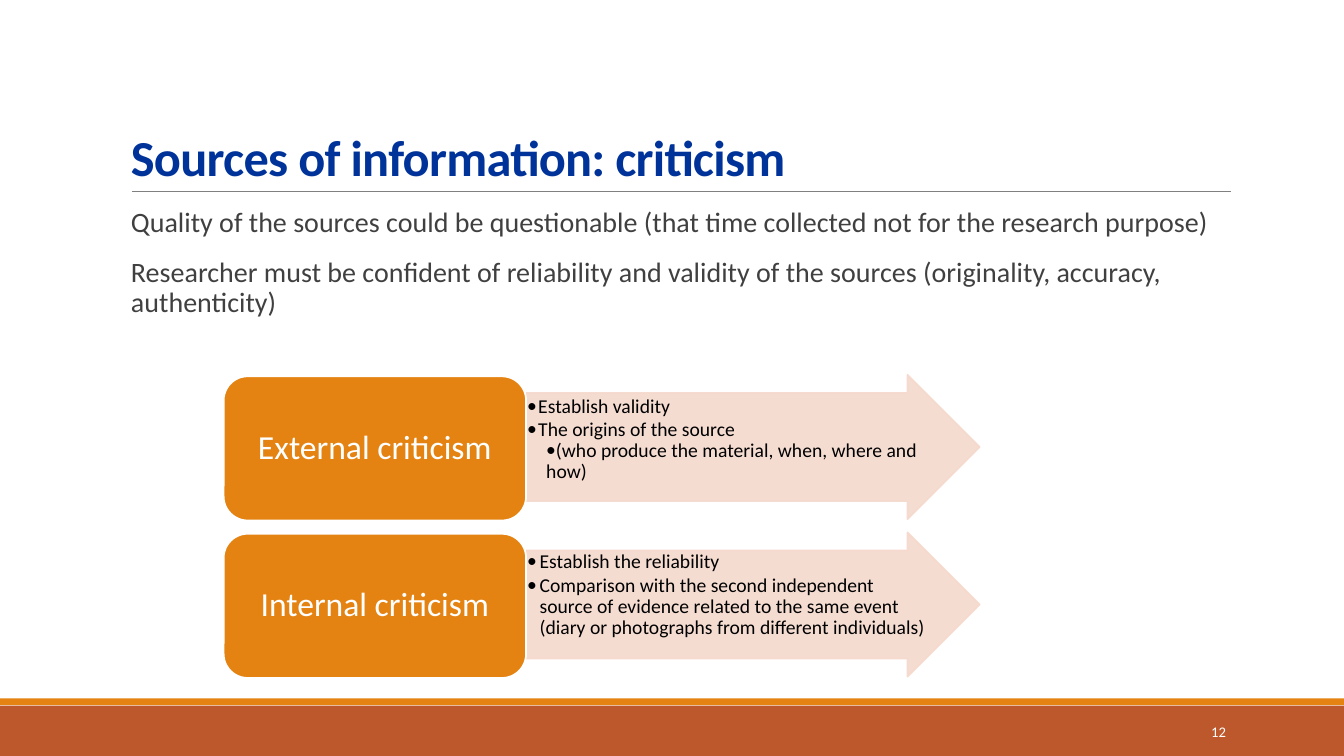
from dataclasses import dataclass

import lxml.etree
import pptx
import pptx.dml.color
import pptx.enum.shapes
import pptx.enum.text
import pptx.oxml.ns
import pptx.util

Pt = pptx.util.Pt
qn = pptx.oxml.ns.qn
SHAPE = pptx.enum.shapes.MSO_SHAPE
ALIGN = pptx.enum.text.PP_ALIGN
ANCHOR = pptx.enum.text.MSO_ANCHOR

COLORS = {
    "band": "BD582C",
    "accent": "E48312",
    "rule": "808080",
    "title": "003399",
    "body": "404040",
    "arrow": "F5D9CC",
    "white": "FFFFFF",
    "black": "000000",
}
FONT = "Calibri"
ROW_TOP = 267.8
ROW_PITCH = 112.5
ROW_HEIGHT = 103


@dataclass
class Box:
    left: float
    top: float
    width: float
    height: float


@dataclass
class Para:
    text: str
    margin: float = 0
    indent: float = 0
    line: float = 0.9
    before: float = 0
    after: float = 0
    bullet: bool = False


@dataclass
class Style:
    size: float
    color: str
    bold: bool = False
    align: ALIGN = ALIGN.LEFT
    anchor: ANCHOR = ANCHOR.TOP
    inset_x: float = 7.2
    inset_y: float = 3.6


@dataclass
class Criticism:
    label: str
    points: list[Para]


BODY = [
    Para("Quality of the sources could be questionable (that time collected not for the research purpose)",
         margin=7.2, before=12, after=2),
    Para("Researcher must be confident of reliability and validity of the sources "
         "(originality, accuracy, authenticity)", margin=7.2, before=12, after=2),
]
ROWS = [
    Criticism("External criticism", [
        Para("Establish validity", margin=8, indent=-8, line=1, bullet=True),
        Para("The origins of the source", margin=8, indent=-8, line=1, bullet=True),
        Para("(who produce the material, when, where and how)", margin=13.7, after=2, bullet=True),
    ]),
    Criticism("Internal criticism", [
        Para("Establish the reliability", margin=9, indent=-9, after=2, bullet=True),
        Para("Comparison with the second independent source of evidence related to the same event "
             "(diary or photographs from different individuals)",
             margin=9, indent=-9, after=2, bullet=True),
    ]),
]


def rgb(name: str) -> pptx.dml.color.RGBColor:
    return pptx.dml.color.RGBColor.from_string(COLORS[name])


def place(box: Box) -> tuple:
    return Pt(box.left), Pt(box.top), Pt(box.width), Pt(box.height)


def write(sp, paras: list[Para], style: Style) -> None:
    tf = sp.text_frame
    tf.word_wrap = True
    tf.vertical_anchor = style.anchor
    tf.margin_left = tf.margin_right = Pt(style.inset_x)
    tf.margin_top = tf.margin_bottom = Pt(style.inset_y)
    for i, para in enumerate(paras):
        p = tf.add_paragraph() if i else tf.paragraphs[0]
        p.text = para.text
        p.alignment = style.align
        p.line_spacing = para.line
        p.space_before = Pt(para.before)
        p.space_after = Pt(para.after)
        pPr = p._p.get_or_add_pPr()
        pPr.set("marL", str(Pt(para.margin)))
        pPr.set("indent", str(Pt(para.indent)))
        if para.bullet:
            lxml.etree.SubElement(pPr, qn("a:buFont")).set("typeface", FONT)
            lxml.etree.SubElement(pPr, qn("a:buChar")).set("char", "•")
        for r in p.runs:
            r.font.name = FONT
            r.font.size = Pt(style.size)
            r.font.bold = style.bold
            r.font.color.rgb = rgb(style.color)


def add_text(slide, box: Box, paras: list[Para], style: Style):
    sp = slide.shapes.add_textbox(*place(box))
    write(sp, paras, style)
    return sp


def add_shape(slide, kind: SHAPE, box: Box, fill: str, line: str = ""):
    sp = slide.shapes.add_shape(kind, *place(box))
    sp.shadow.inherit = False
    sp.fill.solid()
    sp.fill.fore_color.rgb = rgb(fill)
    if line:
        sp.line.color.rgb = rgb(line)
        sp.line.width = Pt(1.25)
    else:
        sp.line.fill.background()
    return sp


def add_row(slide, row: Criticism, top: float) -> None:
    arrow = add_shape(slide, SHAPE.RIGHT_ARROW, Box(375.8, top, 324, ROW_HEIGHT), "arrow", "arrow")
    arrow.adjustments[0] = 0.75
    arrow.adjustments[1] = 0.5
    for clr in arrow._element.spPr.iter(qn("a:srgbClr")):
        lxml.etree.SubElement(clr, qn("a:alpha")).set("val", "90000")
    add_text(slide, Box(375.8, top + 12.8, 285.8, 77), row.points,
             Style(14, "black", inset_x=0.7, inset_y=0.7))
    label = add_shape(slide, SHAPE.ROUNDED_RECTANGLE, Box(159.8, top + 1, 216, ROW_HEIGHT),
                      "accent", "white")
    write(label, [Para(row.label)], Style(24, "white", align=ALIGN.CENTER, anchor=ANCHOR.MIDDLE))


def main() -> None:
    prs = pptx.Presentation()
    prs.slide_width, prs.slide_height = Pt(960), Pt(540)
    slide = prs.slides.add_slide(prs.slide_layouts[6])

    add_shape(slide, SHAPE.RECTANGLE, Box(0, 504, 960, 36), "band")
    add_shape(slide, SHAPE.RECTANGLE, Box(0, 498.8, 960, 4.8), "accent")
    rule = slide.shapes.add_connector(pptx.enum.shapes.MSO_CONNECTOR.STRAIGHT,
                                      Pt(94.3), Pt(136.8), Pt(879), Pt(136.8))
    rule.line.color.rgb = rgb("rule")
    rule.line.width = Pt(0.5)
    lxml.etree.SubElement(rule._element.spPr, qn("a:effectLst"))

    title = add_text(slide, Box(86.4, 22.5, 792, 114.3),
                     [Para("Sources of information: criticism", line=0.85)],
                     Style(36, "title", bold=True, anchor=ANCHOR.BOTTOM))
    title.text_frame.paragraphs[0].runs[0].font._element.set("spc", "-50")
    add_text(slide, Box(86.4, 145.4, 792, 316.8), BODY, Style(20, "body", inset_x=0))
    add_text(slide, Box(779.8, 508.4, 103, 28.8), [Para("12", line=1)],
             Style(10.5, "white", align=ALIGN.RIGHT, anchor=ANCHOR.MIDDLE))

    for i, row in enumerate(ROWS):
        add_row(slide, row, ROW_TOP + i * ROW_PITCH)

    prs.save("out.pptx")


if __name__ == "__main__":
    main()
